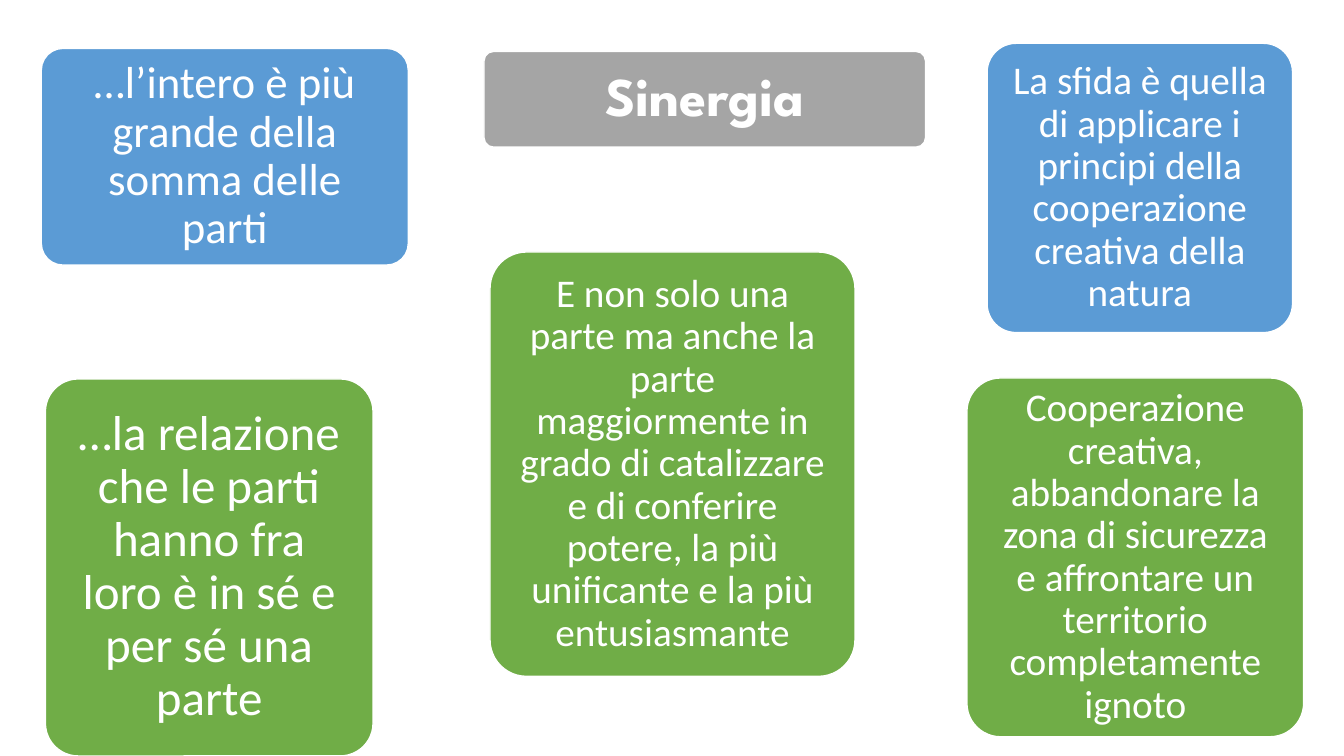
import pptx
import pptx.util
import pptx.dml.color
import pptx.enum.shapes
import pptx.enum.text

Inches = pptx.util.Inches

COLORS = {"grey": "A5A5A5", "blue": "5B9BD5", "green": "70AD47", "white": "FFFFFF"}
CORNER = 0.1  # corner radius as a share of the shorter side

TITLE = {"text": "Sinergia", "box": (4.8, 0.51, 4.38, 0.95), "size": 39, "margin": 0.16}

# Text, (left, top, width, height), fill, text size, margin
CARDS = [
    ("…l’intero è più grande della somma delle parti",
     (0.41, 0.48, 3.64, 2.15), "blue", 32, 0.13),
    ("…la relazione che le parti hanno fra loro è in sé e per sé una parte",
     (0.45, 3.76, 3.25, 3.74), "green", 35, 0.15),
    ("Cooperazione creativa, abbandonare la zona di sicurezza e affrontare "
     "un territorio completamente ignoto",
     (9.59, 3.75, 3.34, 3.56), "green", 28, 0.12),
    ("E non solo una parte ma anche la parte maggiormente in grado di catalizzare "
     "e di conferire potere, la più unificante e la più entusiasmante",
     (4.86, 2.5, 3.62, 4.21), "green", 28, 0.12),
    ("La sfida è quella di applicare i principi della cooperazione creativa della natura",
     (9.79, 0.43, 3.03, 2.87), "blue", 28, 0.12),
]


def color(name):
    return pptx.dml.color.RGBColor.from_string(COLORS[name])


def add_card(slide, box, fill):
    shape = slide.shapes.add_shape(
        pptx.enum.shapes.MSO_SHAPE.ROUNDED_RECTANGLE, *map(Inches, box))
    shape.adjustments[0] = CORNER
    shape.shadow.inherit = False
    shape.fill.solid()
    shape.fill.fore_color.rgb = color(fill)
    shape.line.color.rgb = color("white")
    shape.line.width = pptx.util.Pt(1)
    return shape


def write_text(shape, text, size, margin, font="Calibri", bold=False):
    frame = shape.text_frame
    frame.text = text
    frame.word_wrap = True
    frame.auto_size = pptx.enum.text.MSO_AUTO_SIZE.NONE
    frame.vertical_anchor = pptx.enum.text.MSO_ANCHOR.MIDDLE
    frame.margin_left = frame.margin_right = Inches(margin)
    frame.margin_top = frame.margin_bottom = Inches(margin)
    paragraph = frame.paragraphs[0]
    paragraph.alignment = pptx.enum.text.PP_ALIGN.CENTER
    paragraph.line_spacing = 0.9
    run = paragraph.runs[0]
    run.font.name = font
    run.font.size = pptx.util.Pt(size)
    run.font.bold = bold
    run.font.color.rgb = color("white")


presentation = pptx.Presentation()
presentation.slide_width = Inches(13.33)
presentation.slide_height = Inches(7.5)
slide = presentation.slides.add_slide(presentation.slide_layouts.get_by_name("Title Only"))

# Title on its grey band
add_card(slide, TITLE["box"], "grey")
title = slide.shapes.title
title.left, title.top, title.width, title.height = map(Inches, TITLE["box"])
write_text(title, TITLE["text"], TITLE["size"], TITLE["margin"], "League Spartan", True)
# Bring the title in front of its band
slide.shapes._spTree.append(title._element)

# Statement cards
for text, box, fill, size, margin in CARDS:
    write_text(add_card(slide, box, fill), text, size, margin)

presentation.save("out.pptx")
